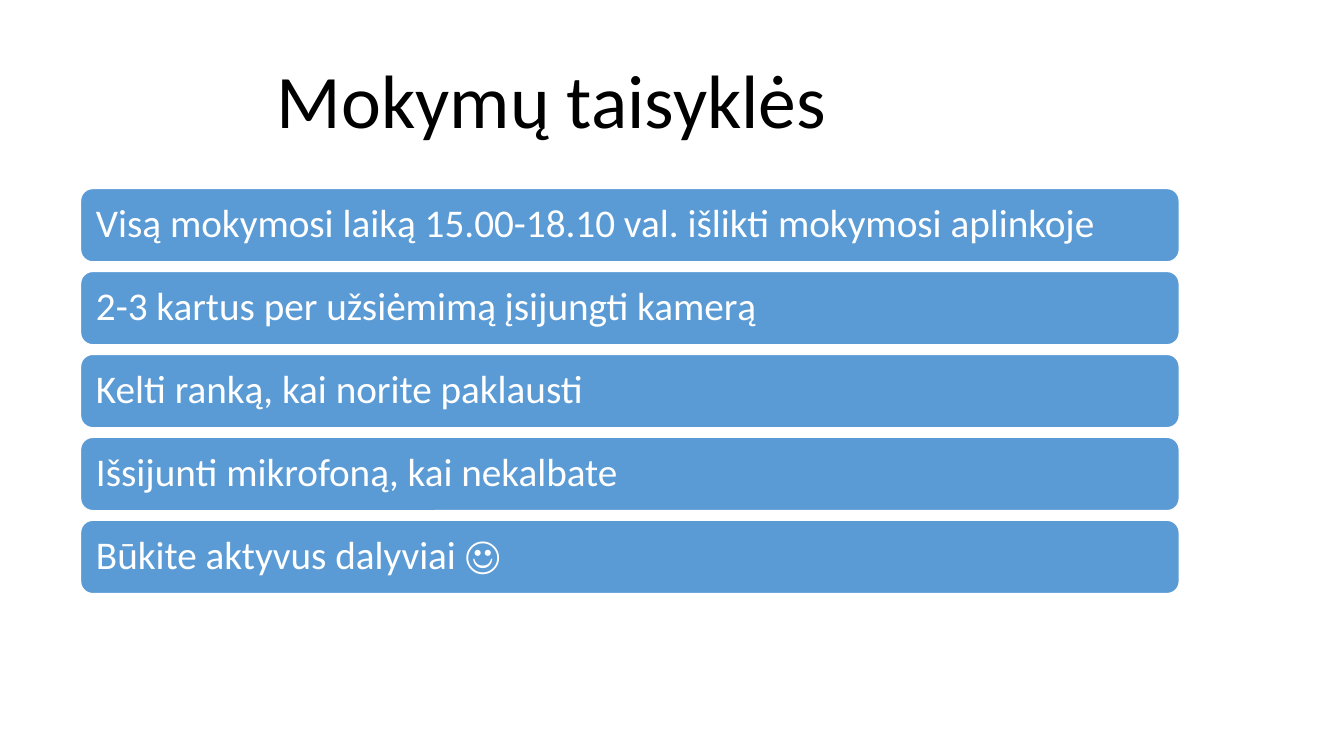
"""Builds the training rules slide: a title above a stack of rounded bars."""
from dataclasses import dataclass

from pptx import Presentation
from pptx.dml.color import RGBColor as Rgb
from pptx.enum.shapes import MSO_SHAPE as Shape
from pptx.enum.text import MSO_ANCHOR as Anchor, MSO_AUTO_SIZE as AutoSize, PP_ALIGN as Align
from pptx.util import Cm, Pt

TITLE = "Mokymų taisyklės "
RULES = [
    "Visą mokymosi laiką 15.00-18.10 val. išlikti mokymosi aplinkoje",
    "2-3 kartus per užsiėmimą įsijungti kamerą",
    "Kelti ranką, kai norite paklausti",
    "Išsijunti mikrofoną, kai nekalbate",
    "Būkite aktyvus dalyviai ☺",
]


@dataclass(frozen=True)
class Theme:
    font: str = "Calibri"
    title_size: int = 54
    rule_size: int = 28
    ink: str = "000000"
    paper: str = "FFFFFF"
    bar: str = "5B9BD5"


THEME = Theme()
BAR_LEFT, BAR_TOP, BAR_WIDTH, BAR_HEIGHT = 2.03, 4.75, 27.69, 1.85
BAR_PITCH = 2.09
BAR_INSET = 0.3


def add_text(para, text, size, color):
    span = para.add_run()
    span.text = text
    span.font.name = THEME.font
    span.font.size = Pt(size)
    span.font.color.rgb = Rgb.from_string(color)


def add_title(page):
    box = page.shapes.add_textbox(Cm(6.65), Cm(1.22), Cm(14.94), Cm(2.57))
    frame = box.text_frame
    frame.word_wrap = False
    frame.auto_size = AutoSize.SHAPE_TO_FIT_TEXT
    para = frame.paragraphs[0]
    para.alignment = Align.CENTER
    add_text(para, TITLE, THEME.title_size, THEME.ink)


def add_rule(page, row, rule):
    top = BAR_TOP + row * BAR_PITCH
    bar = page.shapes.add_shape(
        Shape.ROUNDED_RECTANGLE, Cm(BAR_LEFT), Cm(top), Cm(BAR_WIDTH), Cm(BAR_HEIGHT))
    bar.shadow.inherit = False
    bar.fill.solid()
    bar.fill.fore_color.rgb = Rgb.from_string(THEME.bar)
    bar.line.color.rgb = Rgb.from_string(THEME.paper)
    bar.line.width = Pt(1)
    frame = bar.text_frame
    frame.word_wrap = True
    frame.vertical_anchor = Anchor.MIDDLE
    frame.margin_left = frame.margin_right = Cm(BAR_INSET)
    frame.margin_top = frame.margin_bottom = Cm(BAR_INSET)
    para = frame.paragraphs[0]
    para.alignment = Align.LEFT
    para.line_spacing = 0.9
    add_text(para, rule, THEME.rule_size, THEME.paper)


def main():
    deck = Presentation()
    deck.slide_width, deck.slide_height = Cm(33.87), Cm(19.05)
    page = deck.slides.add_slide(deck.slide_layouts[6])
    for row, rule in enumerate(RULES):
        add_rule(page, row, rule)
    add_title(page)
    deck.save("out.pptx")


if __name__ == "__main__":
    main()
